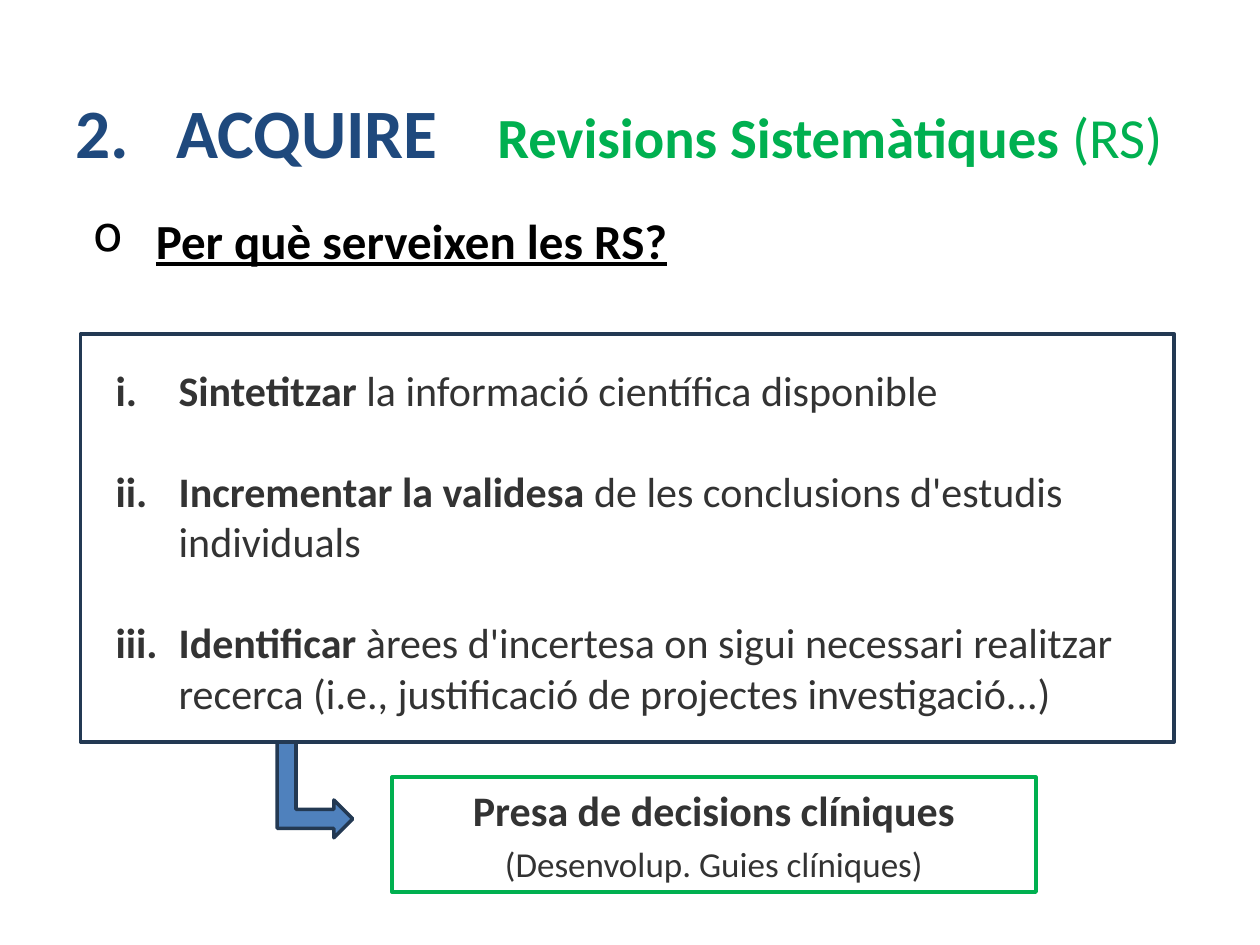
from lxml import etree
from pptx import Presentation
from pptx.dml.color import RGBColor
from pptx.enum.shapes import MSO_SHAPE
from pptx.enum.text import MSO_ANCHOR, MSO_AUTO_SIZE, PP_ALIGN
from pptx.oxml.ns import qn
from pptx.util import Pt

RECTANGLE, BENT_ARROW = MSO_SHAPE.RECTANGLE, MSO_SHAPE.BENT_UP_ARROW
MIDDLE = MSO_ANCHOR.MIDDLE
NO_AUTOFIT = MSO_AUTO_SIZE.NONE
LEFT, CENTER = PP_ALIGN.LEFT, PP_ALIGN.CENTER

NAVY = RGBColor(0x1F, 0x49, 0x7D)
OUTLINE = RGBColor(0x23, 0x39, 0x53)
BLUE = RGBColor(0x4F, 0x81, 0xBD)
GREEN = RGBColor(0x00, 0xB0, 0x50)
BLACK = RGBColor(0x00, 0x00, 0x00)
GREY = RGBColor(0x33, 0x33, 0x33)
FONT = "Calibri"

# Boxes: left, top, width, height in points
TITLE_BOX = (36, 30, 662, 90)
QUESTION_BOX = (46, 116.6, 520, 41)
PURPOSES_FRAME = (46, 190.8, 625, 233.3)
PURPOSES_TEXT = (59, 204.5, 597.6, 239.8)
ARROW_BOX = (152.6, 429.8, 54.7, 43.2)
DECISION_BOX = (224, 444.2, 368, 65.5)

PURPOSES = [
    ("Sintetitzar", " la informació científica disponible"),
    ("Incrementar la validesa", " de les conclusions d'estudis individuals"),
    ("Identificar", " àrees d'incertesa on sigui necessari realitzar recerca "
     "(i.e., justificació de projectes investigació...)"),
]


def points(box):
    return [Pt(length) for length in box]


def set_font(font, size, color, bold=None):
    font.name = FONT
    font.size = Pt(size)
    font.color.rgb = color
    font.bold = bold


def add_span(para, text, bold):
    span = para.add_run()
    span.text = text
    span.font.bold = bold
    return span


def set_bullet(para, tag, **attributes):
    """Give the paragraph a bullet with a half-inch hanging indent."""
    properties = para._p.get_or_add_pPr()
    properties.set("marL", str(Pt(36)))
    properties.set("indent", str(-Pt(36)))
    etree.SubElement(properties, qn(tag), attributes)


def set_tab_stops(para, stops):
    tab_list = etree.SubElement(para._p.get_or_add_pPr(), qn("a:tabLst"))
    for stop in stops:
        etree.SubElement(tab_list, qn("a:tab"), pos=str(Pt(stop)), algn="l")


def add_outlined_shape(page, kind, box, color, width, fill=None):
    shape = page.shapes.add_shape(kind, *points(box))
    shape.shadow.inherit = False
    if fill is None:
        shape.fill.background()
    else:
        shape.fill.solid()
        shape.fill.fore_color.rgb = fill
    shape.line.color.rgb = color
    shape.line.width = Pt(width)
    return shape


def add_text_frame(page, box):
    frame = page.shapes.add_textbox(*points(box)).text_frame
    frame.word_wrap = True
    return frame


def fill_title(page, box):
    title = page.shapes.title
    title.left, title.top, title.width, title.height = points(box)
    frame = title.text_frame
    frame.auto_size = NO_AUTOFIT
    frame.vertical_anchor = MIDDLE
    para = frame.paragraphs[0]
    para.alignment = LEFT
    set_tab_stops(para, (57.5, 241))
    for text, size, color, bold in (
        ("2.\tACQUIRE\t", 39.6, NAVY, True),
        ("Revisions Sistemàtiques", 32.4, GREEN, True),
        (" (RS)", 32.4, GREEN, False),
    ):
        span = add_span(para, text, bold)
        set_font(span.font, size, color, bold)


def add_question(page, box):
    para = add_text_frame(page, box).paragraphs[0]
    set_bullet(para, "a:buChar", char="o")
    span = add_span(para, "Per què serveixen les RS?", True)
    set_font(span.font, 28, BLACK, True)
    span.font.underline = True


def add_purposes(page, frame_box, text_box):
    add_outlined_shape(page, RECTANGLE, frame_box, OUTLINE, 2)
    frame = add_text_frame(page, text_box)
    for index, (lead, rest) in enumerate(PURPOSES):
        para = frame.add_paragraph() if index else frame.paragraphs[0]
        para.space_before = Pt(29 if index else 0)
        set_bullet(para, "a:buAutoNum", type="romanLcPeriod")
        for text, bold in ((lead, True), (rest, False)):
            set_font(add_span(para, text, bold).font, 24, GREY, bold)


def add_arrow(page, box):
    arrow = add_outlined_shape(page, BENT_ARROW, box, OUTLINE, 2, BLUE)
    arrow.rotation = 90


def add_decision(page, box):
    frame = add_outlined_shape(page, RECTANGLE, box, GREEN, 2.25).text_frame
    frame.word_wrap = True
    frame.vertical_anchor = MIDDLE
    heading, detail = frame.paragraphs[0], frame.add_paragraph()
    heading.text = "Presa de decisions clíniques"
    detail.text = "(Desenvolup. Guies clíniques)"
    detail.space_before = Pt(4)
    for para, size, bold in ((heading, 24, True), (detail, 20, False)):
        para.alignment = CENTER
        set_font(para.font, size, GREY, bold)


def main():
    deck = Presentation()
    deck.slide_width, deck.slide_height = Pt(720), Pt(540)
    page = deck.slides.add_slide(deck.slide_layouts.get_by_name("Title Only"))
    fill_title(page, TITLE_BOX)
    add_question(page, QUESTION_BOX)
    add_purposes(page, PURPOSES_FRAME, PURPOSES_TEXT)
    add_arrow(page, ARROW_BOX)
    add_decision(page, DECISION_BOX)
    deck.save("out.pptx")


if __name__ == "__main__":
    main()
